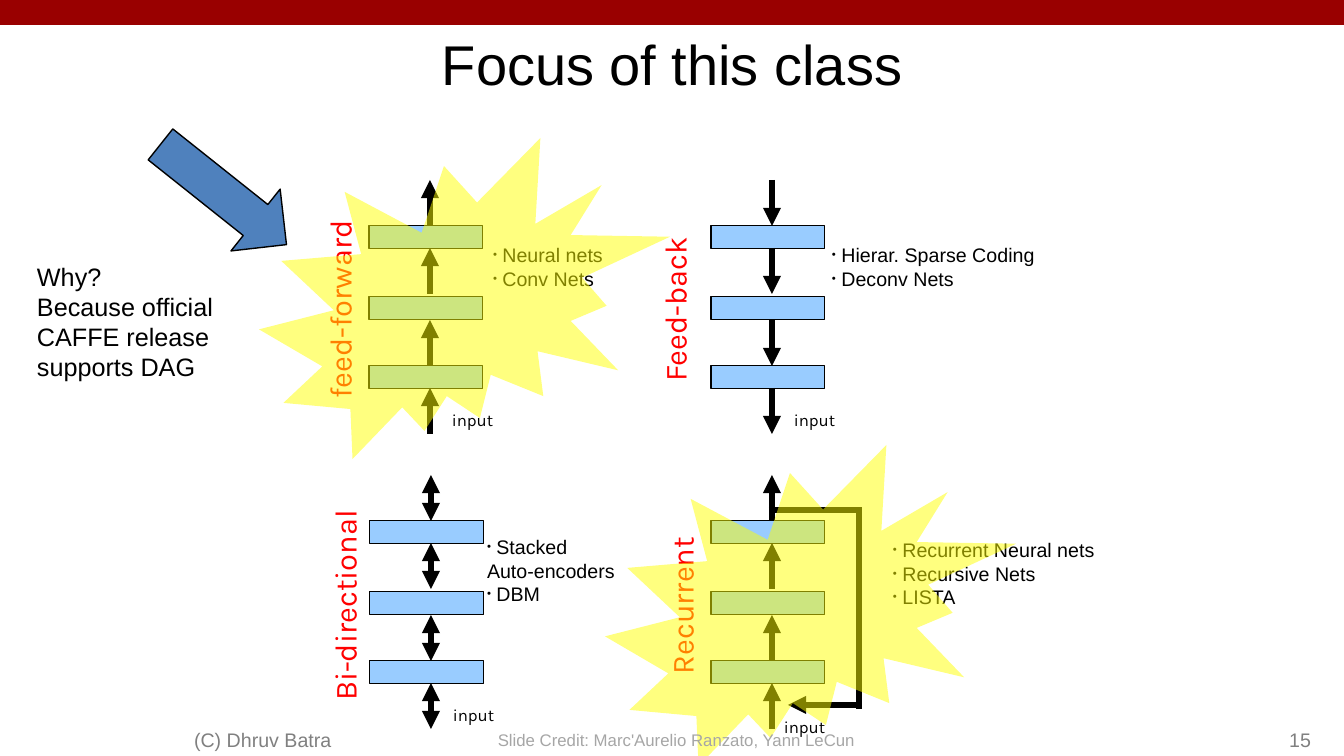
"""Build the slide on four kinds of network architecture."""
from lxml.etree import SubElement
from pptx import Presentation
from pptx.dml.color import RGBColor
from pptx.enum.shapes import MSO_CONNECTOR, MSO_SHAPE
from pptx.enum.text import MSO_ANCHOR, MSO_AUTO_SIZE, PP_ALIGN
from pptx.oxml.ns import qn
from pptx.util import Pt

EMU_PER_PX = 914400 / 100.8
COMPARISON_LAYOUT = 4


def px(length):
    return round(length * EMU_PER_PX)


def color(hex_string):
    return RGBColor.from_string(hex_string)


def write(frame, text, size=14, font="Arial", ink="000000", align=PP_ALIGN.LEFT,
          anchor=MSO_ANCHOR.TOP, insets=(10, 5, 10, 5), wrap=True):
    frame.auto_size = MSO_AUTO_SIZE.NONE
    frame.word_wrap = wrap
    frame.vertical_anchor = anchor
    (frame.margin_left, frame.margin_top,
     frame.margin_right, frame.margin_bottom) = map(px, insets)
    for index, line in enumerate(text.split("\n")):
        paragraph = frame.paragraphs[0] if index == 0 else frame.add_paragraph()
        paragraph.alignment = align
        paragraph.space_before = Pt(0)
        properties = paragraph._p.get_or_add_pPr()
        properties.set("marL", "0")
        properties.set("indent", "0")
        if line.startswith("•"):
            SubElement(properties, qn("a:buSzPct"), val="58000")
            SubElement(properties, qn("a:buFont"), typeface="Arial")
            SubElement(properties, qn("a:buChar"), char="•")
        else:
            SubElement(properties, qn("a:buNone"))
        run = paragraph.add_run()
        run.text = line.removeprefix("•")
        run.font.size = Pt(size)
        run.font.name = font
        run.font.bold = False
        run.font.color.rgb = color(ink)


class SlideBuilder:
    """Holds the style and the current slide."""

    black = "000000"
    layer_fill = "99CCFF"
    label_ink = "FF0000"
    diagram_font = "Karla"
    diagram_insets = (9, 6, 9, 4)
    arrow_width = 4.31

    def __init__(self, presentation):
        layout = presentation.slide_layouts[COMPARISON_LAYOUT]
        self.slide = presentation.slides.add_slide(layout)

    def placeholder(self, index, box, text, **style):
        shape = self.slide.placeholders[index]
        shape.left, shape.top, shape.width, shape.height = map(px, box)
        write(shape.text_frame, text, **style)

    def text(self, box, text, rotation=0, **style):
        shape = self.slide.shapes.add_textbox(*map(px, box))
        shape.rotation = rotation
        write(shape.text_frame, text, **style)

    def shape(self, kind, box, fill, line=None, rotation=0, alpha=None):
        shape = self.slide.shapes.add_shape(kind, *map(px, box))
        shape.shadow.inherit = False
        shape.rotation = rotation
        shape.fill.solid()
        shape.fill.fore_color.rgb = color(fill)
        if alpha is not None:
            fill_color = shape._element.spPr.find(".//" + qn("a:srgbClr"))
            SubElement(fill_color, qn("a:alpha"), val=str(alpha * 1000))
        if line is None:
            shape.line.fill.background()
        else:
            shape.line.color.rgb = color(self.black)
            shape.line.width = Pt(line)

    def line(self, start, end, heads=("tailEnd",)):
        connector = self.slide.shapes.add_connector(
            MSO_CONNECTOR.STRAIGHT, *map(px, (*start, *end)))
        connector.line.color.rgb = color(self.black)
        connector.line.width = Pt(self.arrow_width)
        for head in heads:
            SubElement(connector.line._get_or_add_ln(), qn(f"a:{head}"), type="triangle")
        SubElement(connector._element.spPr, qn("a:effectLst"))

    def network(self, left, top, label, label_box, input_at, flow):
        for offset in (0, 71, 140):
            self.shape(MSO_SHAPE.RECTANGLE, (left, top + offset, 114, 23),
                       self.layer_fill, line=0.75)
        axis = left + 61
        for offset in (-46, 22, 94, 162):
            upper, lower = (axis, top + offset), (axis, top + offset + 46)
            if flow == "down":
                self.line(upper, lower)
            elif flow == "up":
                self.line(lower, upper)
            else:
                self.line(lower, upper, heads=("headEnd", "tailEnd"))
        self.text((*input_at, 69, 34), "input", size=12, font=self.diagram_font,
                  align=PP_ALIGN.CENTER, insets=self.diagram_insets)
        self.text((*label_box, 229, 43), label, rotation=270, size=22,
                  font=self.diagram_font, ink=self.label_ink,
                  align=PP_ALIGN.CENTER, insets=(9, 7, 9, 4))


def main():
    presentation = Presentation()
    presentation.slide_width, presentation.slide_height = px(1344), px(756)
    builder = SlideBuilder(presentation)

    builder.shape(MSO_SHAPE.RECTANGLE, (0, 0, 1344, 25), "990000")
    builder.placeholder(0, (168, 25, 1008, 76), "Focus of this class", size=40,
                        align=PP_ALIGN.CENTER, anchor=MSO_ANCHOR.MIDDLE)

    examples = (
        ((484, 237, 182, 60), "• Neural nets\n• Conv Nets"),
        ((823, 237, 282, 60), "• Hierar. Sparse Coding\n• Deconv Nets"),
        ((478, 529, 176, 112), "• Stacked\nAuto-encoders\n• DBM"),
        ((884, 532, 292, 86), "• Recurrent Neural nets\n• Recursive Nets\n• LISTA"),
    )
    for index, (box, text) in enumerate(examples, start=1):
        builder.placeholder(index, box, text, insets=builder.diagram_insets)

    networks = (
        (369, 226, "feed-forward", (221, 288), (438, 404), "up"),
        (711, 226, "Feed-back", (556, 288), (780, 404), "down"),
        (370, 521, "Bi-directional", (226, 584), (439, 699), "both"),
        (711, 521, "Recurrent", (563, 584), (770, 711), "up"),
    )
    for network in networks:
        builder.network(*network)

    builder.line((859, 709), (859, 507), heads=())
    builder.line((769, 510), (861, 510), heads=())
    builder.line((858, 705), (788, 705))

    for left, top in ((259, 138), (605, 445)):
        builder.shape(MSO_SHAPE.EXPLOSION2, (left, top, 411, 321), "FFFF00", alpha=50)

    builder.shape(MSO_SHAPE.DOWN_ARROW, (184, 114, 79, 161), "4F81BD",
                  line=1, rotation=308.5)
    builder.text((27, 256, 233, 132),
                 "Why?\nBecause official\nCAFFE release supports DAG", size=18)

    builder.text((486, 725, 381, 30), "Slide Credit: Marc'Aurelio Ranzato, Yann LeCun",
                 size=12, ink="A6A6A6", align=PP_ALIGN.CENTER, wrap=False)
    builder.text((184, 706, 320, 50), "(C) Dhruv Batra", ink="808080",
                 anchor=MSO_ANCHOR.BOTTOM)
    builder.text((1041, 706, 280, 50), "15", ink="808080", align=PP_ALIGN.RIGHT,
                 anchor=MSO_ANCHOR.BOTTOM)
    presentation.save("out.pptx")


if __name__ == "__main__":
    main()
